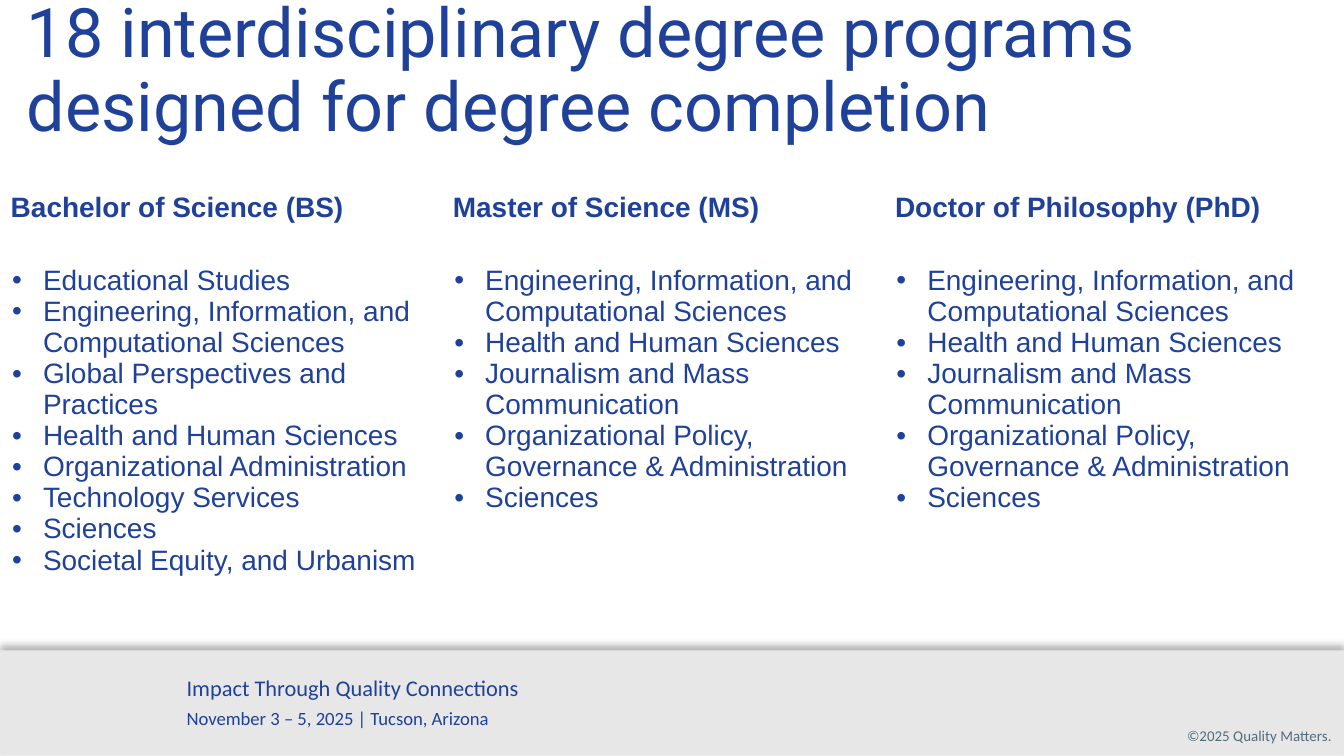
from lxml.etree import SubElement
from pptx import Presentation
from pptx.dml.color import RGBColor
from pptx.enum.shapes import MSO_SHAPE
from pptx.enum.text import MSO_ANCHOR, MSO_AUTO_SIZE, PP_ALIGN
from pptx.oxml.ns import qn
from pptx.util import Inches, Pt

COLORS = {"blue": "1F419A", "band": "E7E7E7", "slate": "526C7C", "shadow": "000000"}
NO_STYLE_NO_GRID = "{2D5ABB26-0587-4C30-8999-92F81FD0307C}"

GRADUATE_PROGRAMS = [
    "Engineering, Information, and Computational Sciences",
    "Health and Human Sciences",
    "Journalism and Mass Communication",
    "Organizational Policy, Governance & Administration",
    "Sciences",
]
DEGREES = {
    "Bachelor of Science (BS)": [
        "Educational Studies ",
        "Engineering, Information, and Computational Sciences",
        "Global Perspectives and Practices",
        "Health and Human Sciences",
        "Organizational Administration",
        "Technology Services",
        "Sciences",
        "Societal Equity, and Urbanism",
    ],
    "Master of Science (MS)": GRADUATE_PROGRAMS,
    "Doctor of Philosophy (PhD)": GRADUATE_PROGRAMS,
}


def rgb(name):
    return RGBColor.from_string(COLORS[name])


def add_span(para, text, size, font, color="blue", bold=False):
    span = para.add_run()
    span.text = text
    span.font.size = Pt(size)
    span.font.name = font
    span.font.bold = bold
    span.font.color.rgb = rgb(color)


def set_insets(target, left, top, right, bottom):
    target.margin_left, target.margin_top = Inches(left), Inches(top)
    target.margin_right, target.margin_bottom = Inches(right), Inches(bottom)


def next_para(frame, index):
    return frame.add_paragraph() if index else frame.paragraphs[0]


def add_bullet(para):
    props = para._p.get_or_add_pPr()
    props.set("marL", str(Inches(0.24)))
    props.set("indent", str(Inches(-0.23)))
    color = SubElement(props, qn("a:buClr"))
    SubElement(color, qn("a:srgbClr"), val=COLORS["blue"])
    SubElement(props, qn("a:buFont"), typeface="Arial")
    SubElement(props, qn("a:buChar"), char="•")


def add_band(page):
    band = page.shapes.add_shape(
        MSO_SHAPE.RECTANGLE, 0, Inches(4.84), Inches(10), Inches(0.78))
    band.fill.solid()
    band.fill.fore_color.rgb = rgb("band")
    band.line.fill.background()
    band.shadow.inherit = False
    effects = band._element.spPr.find(qn("a:effectLst"))
    shadow = SubElement(effects, qn("a:outerShdw"), blurRad=str(Pt(4)),
                        dist=str(Pt(3)), dir="16200000", rotWithShape="0")
    color = SubElement(shadow, qn("a:srgbClr"), val=COLORS["shadow"])
    SubElement(color, qn("a:alpha"), val="29000")


def add_footer(page, place, lines, color, align=PP_ALIGN.LEFT, right_inset=0.1):
    box = page.shapes.add_textbox(*map(Inches, place))
    frame = box.text_frame
    frame.word_wrap = True
    frame.auto_size = MSO_AUTO_SIZE.SHAPE_TO_FIT_TEXT
    set_insets(frame, 0.1, 0.05, right_inset, 0.05)
    for index, (text, size) in enumerate(lines):
        para = next_para(frame, index)
        para.alignment = align
        if index:
            para.space_before = Pt(3)
        add_span(para, text, size, "Calibri", color)


def set_title(page, text):
    title = page.shapes.title
    title.left, title.top = Inches(0.13), Inches(-0.09)
    title.width, title.height = Inches(9.8), Inches(1.26)
    frame = title.text_frame
    frame.word_wrap = True
    frame.auto_size = MSO_AUTO_SIZE.NONE
    frame.vertical_anchor = MSO_ANCHOR.MIDDLE
    set_insets(frame, 0.07, 0.04, 0.07, 0.04)
    para = frame.paragraphs[0]
    para.alignment = PP_ALIGN.LEFT
    para.line_spacing = 0.9
    add_span(para, text, 36.6, "Roboto")


def fill_cell(cell, lines, heading=False):
    cell.fill.background()
    set_insets(cell, 0.08, 0.04, 0.08, 0.04)
    for index, text in enumerate(lines):
        para = next_para(cell.text_frame, index)
        if not heading:
            add_bullet(para)
        add_span(para, text, 15, "Arial", bold=heading)


def add_degree_table(page):
    column_width, row_heights = Inches(3.29), [Inches(0.54), Inches(3.62)]
    frame = page.shapes.add_table(
        len(row_heights), len(DEGREES), 0, Inches(1.39),
        column_width * len(DEGREES), sum(row_heights))
    table = frame.table
    table.first_row = False
    table.horz_banding = False
    style = next(frame._element.iter(qn("a:tableStyleId")))
    style.text = NO_STYLE_NO_GRID
    for row, height in zip(table.rows, row_heights):
        row.height = height
    for index, (degree, programs) in enumerate(DEGREES.items()):
        table.columns[index].width = column_width
        fill_cell(table.cell(0, index), [degree], heading=True)
        fill_cell(table.cell(1, index), programs)


def main():
    deck = Presentation()
    deck.slide_width = Inches(10)
    deck.slide_height = deck.slide_width * 9 // 16
    page = deck.slides.add_slide(deck.slide_layouts[5])
    add_band(page)
    add_footer(page, (8.32, 5.36, 1.59, 0.24), [("©2025 Quality Matters.", 8)],
               "slate", PP_ALIGN.RIGHT, right_inset=0)
    add_footer(page, (1.29, 4.97, 6.39, 0.51),
               [("Impact Through Quality Connections", 12),
                ("November 3 – 5, 2025 | Tucson, Arizona", 10)], "blue")
    set_title(page, "18 interdisciplinary degree programs designed for degree completion")
    add_degree_table(page)
    deck.save("out.pptx")


if __name__ == "__main__":
    main()
